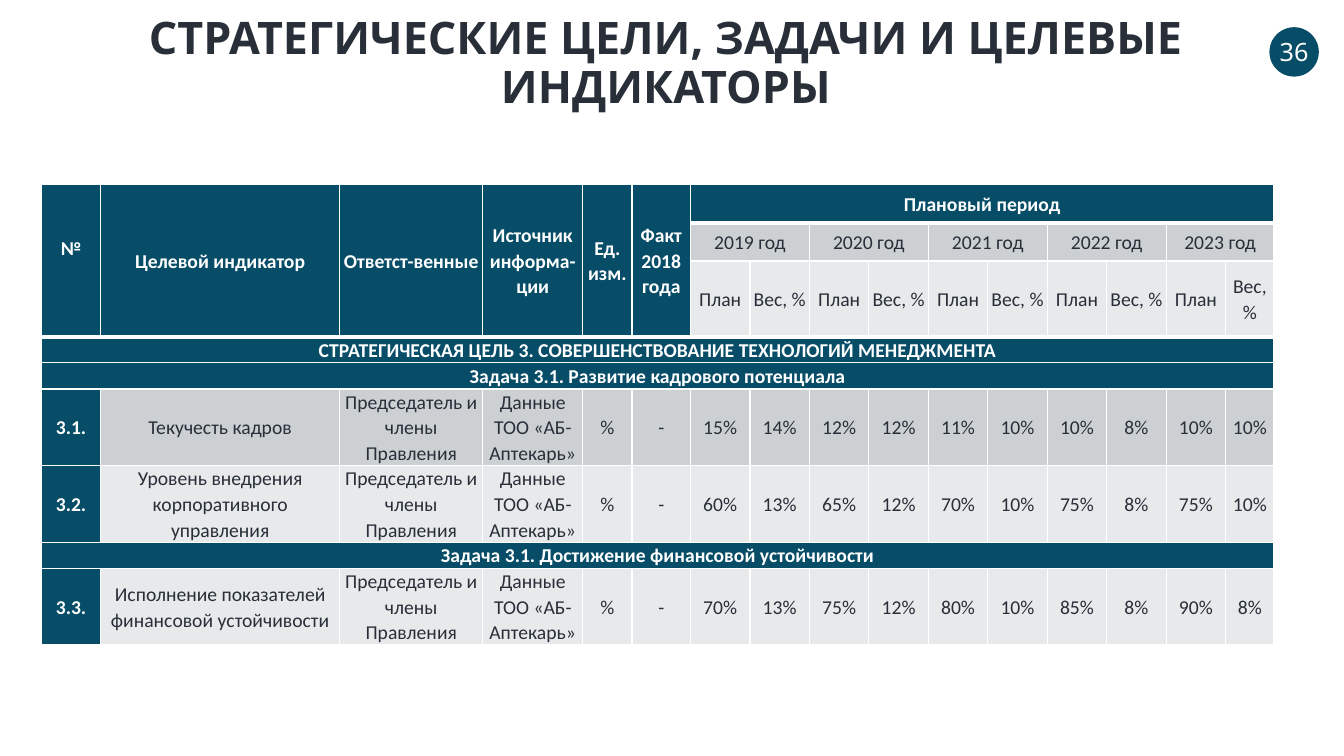
import pptx
import pptx.dml.color
import pptx.enum.shapes
import pptx.enum.text
import pptx.oxml
import pptx.oxml.ns
import pptx.util

Inches = pptx.util.Inches
Pt = pptx.util.Pt
RGBColor = pptx.dml.color.RGBColor
Anchor = pptx.enum.text.MSO_ANCHOR

TEAL = RGBColor(0x07, 0x4D, 0x67)
INK = RGBColor(0x28, 0x2F, 0x39)
GREY = RGBColor(0xCC, 0xD0, 0xD3)
PALE = RGBColor(0xE7, 0xE9, 0xEB)
WHITE = RGBColor(0xFF, 0xFF, 0xFF)

WIDTH, HEIGHT = 13.33, 7.5
COLUMNS = [0.59, 2.37, 1.42, 0.99, 0.49, 0.58] + [0.59] * 9 + [0.48]
ROWS = [0.38, 0.38, 0.75, 0.26, 0.26, 0.76, 0.76, 0.26, 0.76]
HEADINGS = ["№", "Целевой индикатор", "Ответст-венные", "Источник информа-ции",
            "Ед. изм.", "Факт 2018 года"]
FIRST_PLAN = len(HEADINGS)
YEARS = range(2019, 2024)
OWNER = "Председатель и члены Правления"
SOURCE = "Данные ТОО «АБ-Аптекарь»"
BANDS = {
    3: "СТРАТЕГИЧЕСКАЯ ЦЕЛЬ 3. СОВЕРШЕНСТВОВАНИЕ ТЕХНОЛОГИЙ МЕНЕДЖМЕНТА",
    4: "Задача 3.1. Развитие кадрового потенциала",
    7: "Задача 3.1. Достижение финансовой устойчивости",
}
# row: (number, indicator, fill, plan and weight for each year)
INDICATORS = {
    5: ("3.1.", "Текучесть кадров", GREY,
        [15, 14, 12, 12, 11, 10, 10, 8, 10, 10]),
    6: ("3.2.", "Уровень внедрения корпоративного управления", PALE,
        [60, 13, 65, 12, 70, 10, 75, 8, 75, 10]),
    8: ("3.3.", "Исполнение показателей финансовой устойчивости", PALE,
        [70, 13, 75, 12, 80, 10, 85, 8, 90, 8]),
}


def write(frame, text, size, font="Calibri", color=INK, bold=False, spacing=1.0):
    para = frame.paragraphs[0]
    para.alignment = pptx.enum.text.PP_ALIGN.CENTER
    para.line_spacing = spacing
    span = para.add_run()
    span.text = text
    span.font.name = font
    span.font.size = Pt(size)
    span.font.bold = bold
    span.font.color.rgb = color


def set_borders(cell, bottom):
    properties = cell._tc.get_or_add_tcPr()
    for side, width in (("L", 1), ("R", 1), ("T", 1), ("B", bottom)):
        properties.append(pptx.oxml.parse_xml(
            f'<a:ln{side} {pptx.oxml.ns.nsdecls("a")} w="{Pt(width)}">'
            f'<a:solidFill><a:srgbClr val="{WHITE}"/></a:solidFill></a:ln{side}>'))


def fill_cell(cell, text, fill=TEAL, bottom_margin=0):
    cell.margin_bottom = Inches(bottom_margin)
    cell.fill.solid()
    cell.fill.fore_color.rgb = fill
    heading = fill == TEAL
    write(cell.text_frame, text, 14, color=WHITE if heading else INK,
          bold=heading, spacing=1.07)


def fill_header(table):
    for column, heading in enumerate(HEADINGS):
        table.cell(0, column).merge(table.cell(2, column))
        fill_cell(table.cell(0, column), heading,
                  bottom_margin=0.26 if column == 0 else 0)
    table.cell(0, FIRST_PLAN).merge(table.cell(0, len(COLUMNS) - 1))
    fill_cell(table.cell(0, FIRST_PLAN), "Плановый период")
    for index, year in enumerate(YEARS):
        column = FIRST_PLAN + 2 * index
        table.cell(1, column).merge(table.cell(1, column + 1))
        fill_cell(table.cell(1, column), f"{year} год", GREY)
        fill_cell(table.cell(2, column), "План", PALE)
        fill_cell(table.cell(2, column + 1), "Вес, %", PALE)


def fill_body(table):
    for row, text in BANDS.items():
        table.cell(row, 0).merge(table.cell(row, len(COLUMNS) - 1))
        fill_cell(table.cell(row, 0), text)
    for row, (number, name, fill, values) in INDICATORS.items():
        fill_cell(table.cell(row, 0), number)
        texts = [name, OWNER, SOURCE, "%", "-"] + [f"{value}%" for value in values]
        for column, text in enumerate(texts, 1):
            fill_cell(table.cell(row, column), text, fill)


def add_indicator_table(page, left, top):
    table = page.shapes.add_table(
        len(ROWS), len(COLUMNS), Inches(left), Inches(top),
        Inches(sum(COLUMNS)), Inches(sum(ROWS))).table
    table.first_row = table.horz_banding = False
    for column, width in zip(table.columns, COLUMNS):
        column.width = Inches(width)
    for index, (row, height) in enumerate(zip(table.rows, ROWS)):
        row.height = Inches(height)
        for column, cell in enumerate(row.cells):
            thick = index == 0 or (index == 2 and column < FIRST_PLAN)
            set_borders(cell, 3 if thick else 1)
            cell.margin_left = cell.margin_right = Inches(0.01)
            cell.margin_top = cell.margin_bottom = 0
            cell.vertical_anchor = Anchor.MIDDLE
    fill_header(table)
    fill_body(table)


def place_title(page, left, top, width, height):
    title = page.shapes.title
    title.left, title.top = Inches(left), Inches(top)
    title.width, title.height = Inches(width), Inches(height)
    frame = title.text_frame
    frame.word_wrap = True
    frame.vertical_anchor = Anchor.TOP
    frame.auto_size = pptx.enum.text.MSO_AUTO_SIZE.SHAPE_TO_FIT_TEXT
    write(frame, "СТРАТЕГИЧЕСКИЕ ЦЕЛИ, ЗАДАЧИ И ЦЕЛЕВЫЕ ИНДИКАТОРЫ", 32,
          font="Noto Sans", bold=True, spacing=0.9)


def add_page_number(page, left, top, size):
    badge = page.shapes.add_shape(
        pptx.enum.shapes.MSO_SHAPE.OVAL, Inches(left), Inches(top),
        Inches(size), Inches(size))
    badge.shadow.inherit = False
    badge.fill.solid()
    badge.fill.fore_color.rgb = TEAL
    badge.line.fill.background()
    badge.text_frame.word_wrap = False
    badge.text_frame.vertical_anchor = Anchor.MIDDLE
    write(badge.text_frame, "36", 18, font="Noto Sans", color=WHITE)


def main():
    deck = pptx.Presentation()
    deck.slide_width, deck.slide_height = Inches(WIDTH), Inches(HEIGHT)
    page = deck.slides.add_slide(deck.slide_layouts[5])
    add_indicator_table(page, 0.41, 1.83)
    place_title(page, 0.71, 0.11, 11.79, 0.64)
    add_page_number(page, 12.59, 0.27, 0.49)
    deck.save("out.pptx")


if __name__ == "__main__":
    main()
